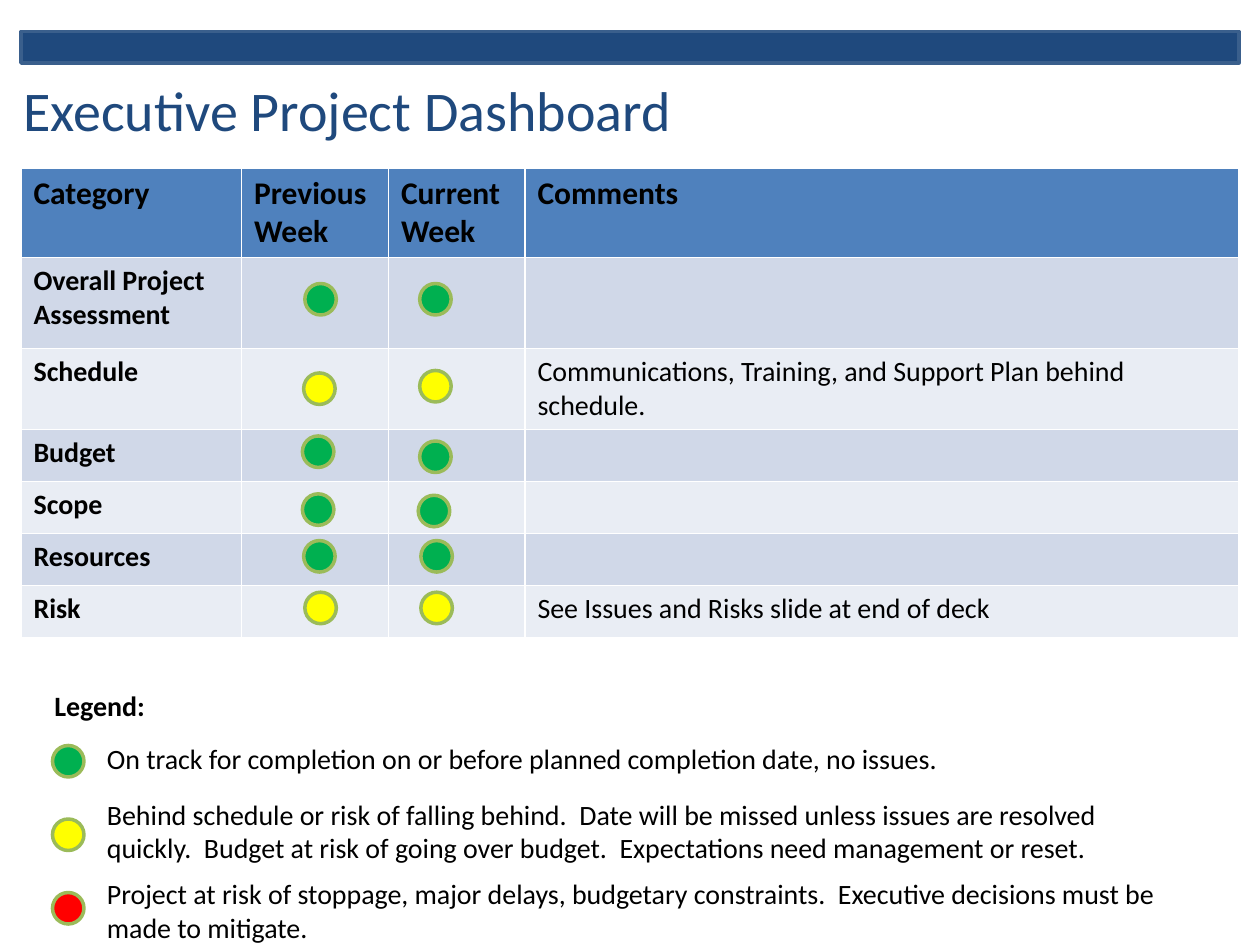
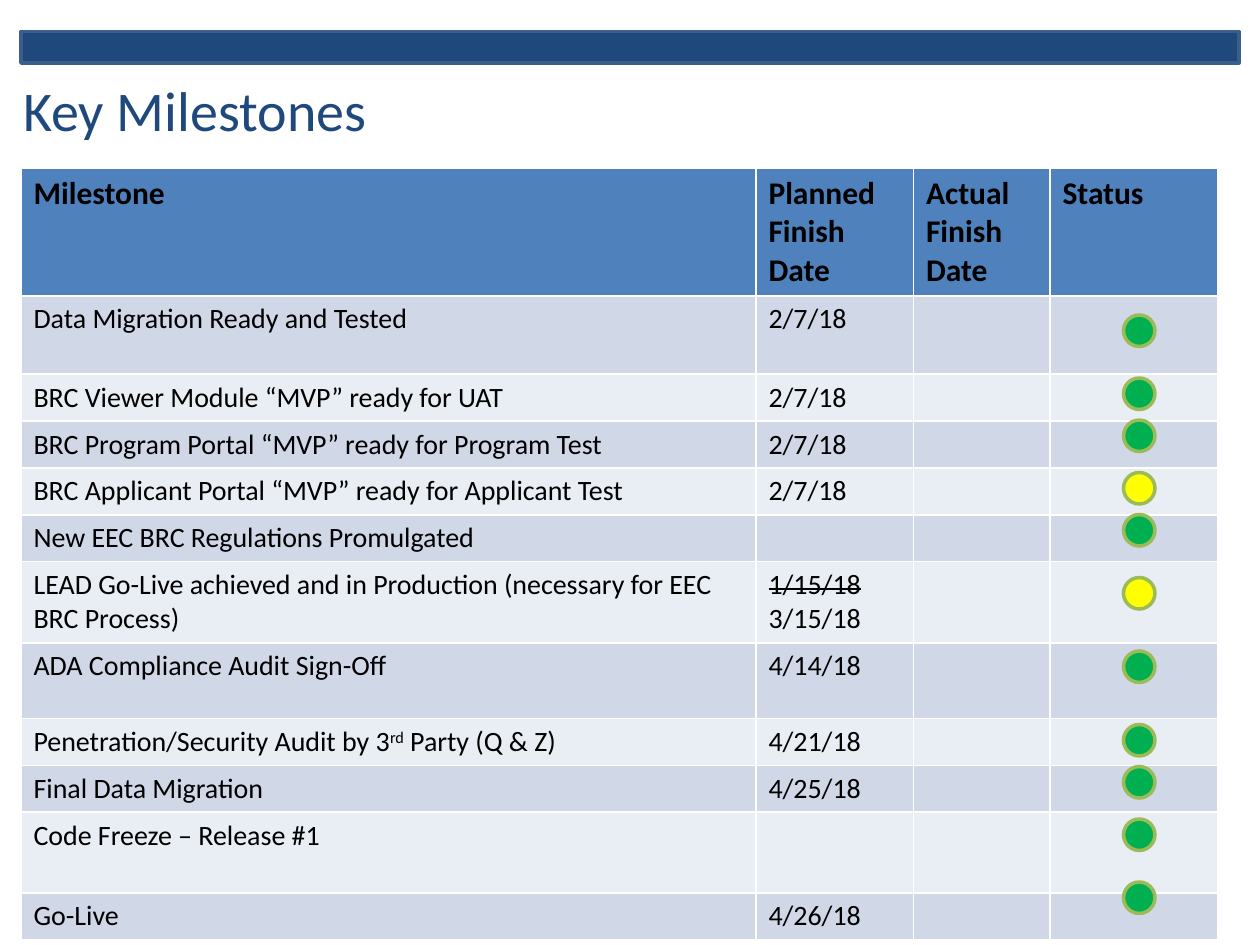
from pptx import Presentation
from pptx.dml.color import RGBColor
from pptx.enum.shapes import MSO_SHAPE
from pptx.enum.text import MSO_ANCHOR, PP_ALIGN
from pptx.util import Pt

RECT, OVAL = MSO_SHAPE.RECTANGLE, MSO_SHAPE.OVAL
MIDDLE, LEFT = MSO_ANCHOR.MIDDLE, PP_ALIGN.LEFT

NAVY = RGBColor(0x1F, 0x49, 0x7D)
NAVY_EDGE = RGBColor(0x3A, 0x5F, 0x8C)
HEADER = RGBColor(0x4F, 0x81, 0xBD)
BANDS = RGBColor(0xD0, 0xD8, 0xE8), RGBColor(0xE9, 0xED, 0xF4)
BLACK = RGBColor(0, 0, 0)
GREEN = RGBColor(0x00, 0xB0, 0x50)
YELLOW = RGBColor(0xFF, 0xFF, 0x00)
RED = RGBColor(0xFF, 0x00, 0x00)
DOT_EDGE = RGBColor(0x9B, 0xBB, 0x59)

FONT = "Calibri"
BODY = 16
DOT = 18
LEFT_EDGE, TABLE_TOP = 12, 96

# In cell text, a new line starts a paragraph and "|" separates runs;
# these runs carry an extra character attribute.
RUN_MARKS = {"1/15/18": ("strike", "sngStrike"), "rd": ("baseline", "30000")}

# Dashboard: category, comment, row height, status colour, dots (previous, current)
DASH_HEAD = ("Category", "Previous\nWeek", "Current\nWeek", "Comments")
DASH_COLS = (126, 84, 78, 408)
DASH_HEAD_HEIGHT = 51
CATEGORIES = [
    ("Overall Project Assessment", "", 52, GREEN, ((174.2, 162), (239.8, 162))),
    ("Schedule", "Communications, Training, and Support Plan behind schedule.",
     46.2, YELLOW, ((173.5, 213.1), (239.8, 211.7))),
    ("Budget", "", 29.7, GREEN, ((172.8, 249.1), (239.8, 252))),
    ("Scope", "", 29.7, GREEN, ((172.8, 282.2), (239, 283))),
    ("Resources", "", 29.7, GREEN, ((173.5, 308.9), (240.5, 308.9))),
    ("Risk", "See Issues and Risks slide at end of deck",
     29.7, YELLOW, ((174.2, 338.4), (240.5, 338.4))),
]

# Legend: colour, dot top, text top, text height, meaning
LEGEND = [
    (GREEN, 426, 420, 26.6,
     "On track for completion on or before planned completion date, no issues."),
    (YELLOW, 468, 452, 46,
     "Behind schedule or risk of falling behind.  Date will be missed unless issues "
     "are resolved quickly.  Budget at risk of going over budget.  Expectations need "
     "management or reset."),
    (RED, 510, 497.5, 46,
     "Project at risk of stoppage, major delays, budgetary constraints.  Executive "
     "decisions must be made to mitigate."),
]

# Milestones: name, planned date, row height, status colour, dot top
MILE_HEAD = ("Milestone", "Planned Finish Date", "Actual Finish Date", "Status")
MILE_COLS = (420, 90, 78, 96)
MILE_HEAD_HEIGHT = 73
MILE_DOT_LEFT = 642
MILESTONES = [
    ("Data Migration Ready and Tested", "2/7/18", 44.7, GREEN, 180),
    ("BRC Viewer Module “MVP” ready for UAT", "2/7/18", 26.8, GREEN, 216),
    ("BRC Program Portal “MVP” ready for Program Test", "2/7/18", 26.8, GREEN, 240),
    ("BRC Applicant Portal “MVP” ready for Applicant Test", "2/7/18", 26.8, YELLOW, 270),
    ("New EEC BRC Regulations Promulgated", "", 26.8, GREEN, 294),
    ("LEAD Go-Live achieved and in Production (necessary for EEC BRC Process)",
     "1/15/18\n3/15/18", 46.2, YELLOW, 330),
    ("ADA Compliance Audit Sign-Off", "4/14/18", 43.2, GREEN, 372),
    ("Penetration/Security Audit by 3|rd| Party (Q & Z)", "4/21/18", 26.8, GREEN, 414),
    ("Final Data Migration", "4/25/18", 26.8, GREEN, 438),
    ("Code Freeze – Release #1", "", 46.2, GREEN, 468),
    ("Go-Live", "4/26/18", 26.8, GREEN, 504),
]


def set_font(font, size, color=BLACK, bold=False):
    font.name, font.size, font.bold = FONT, Pt(size), bold
    font.color.rgb = color


def add_shape(s, kind, left, top, width, height, fill, edge):
    sp = s.shapes.add_shape(kind, Pt(left), Pt(top), Pt(width), Pt(height))
    sp.shadow.inherit = False
    sp.fill.solid()
    sp.fill.fore_color.rgb = fill
    sp.line.color.rgb = edge
    sp.line.width = Pt(2)


def add_dot(s, left, top, color):
    add_shape(s, OVAL, left, top, DOT, DOT, color, DOT_EDGE)


def add_text(s, left, top, width, height, text, bold=False):
    tf = s.shapes.add_textbox(Pt(left), Pt(top), Pt(width), Pt(height)).text_frame
    tf.word_wrap = True
    p = tf.paragraphs[0]
    p.text = text
    set_font(p.font, BODY, bold=bold)


def add_slide(prs, title, title_width):
    """Slide with the shared title style and top band."""
    s = prs.slides.add_slide(prs.slide_layouts[5])
    sp = s.shapes.title
    sp.left, sp.top, sp.width, sp.height = Pt(6), Pt(4.5), Pt(title_width), Pt(116)
    tf = sp.text_frame
    tf.text = title
    tf.vertical_anchor = MIDDLE
    p = tf.paragraphs[0]
    p.alignment = LEFT
    set_font(p.font, 32, NAVY)
    add_shape(s, RECT, LEFT_EDGE, 18, 696, 18, NAVY, NAVY_EDGE)
    return s


def fill_cell(cell, text, color, size, bold):
    cell.fill.solid()
    cell.fill.fore_color.rgb = color
    tf = cell.text_frame
    for i, line in enumerate(text.split("\n")):
        p = tf.add_paragraph() if i else tf.paragraphs[0]
        set_font(p.font, size, bold=bold)
        if not line:  # keeps an empty cell from stretching its row
            p._p.get_or_add_endParaRPr().set("sz", str(size * 100))
            continue
        for part in line.split("|"):
            r = p.add_run()
            r.text = part
            if part in RUN_MARKS:
                r.font._element.set(*RUN_MARKS[part])


def add_table(s, head, rows, cols, heights, bold_first=False):
    table = s.shapes.add_table(len(rows) + 1, len(cols), Pt(LEFT_EDGE), Pt(TABLE_TOP),
                               Pt(sum(cols)), Pt(sum(heights))).table
    for column, width in zip(table.columns, cols):
        column.width = Pt(width)
    for i, (row, height) in enumerate(zip([head, *rows], heights)):
        table.rows[i].height = Pt(height)
        for j, text in enumerate(row):
            color = BANDS[(i - 1) % 2] if i else HEADER
            bold = i == 0 or (bold_first and j == 0)
            fill_cell(table.cell(i, j), text, color, BODY if i else 18, bold)


def build_dashboard(prs):
    s = add_slide(prs, "Executive Project Dashboard", 612)
    add_table(s, DASH_HEAD, [(c[0], "", "", c[1]) for c in CATEGORIES], DASH_COLS,
              [DASH_HEAD_HEIGHT] + [c[2] for c in CATEGORIES], bold_first=True)
    for *_, color, dots in CATEGORIES:
        for left, top in dots:
            add_dot(s, left, top, color)
    # Legend
    add_text(s, 24, 390, 132, 26.6, "Legend:", bold=True)
    for color, dot_top, top, height, meaning in LEGEND:
        add_dot(s, 30, dot_top, color)
        add_text(s, 54, top, 630, height, meaning)


def build_milestones(prs):
    s = add_slide(prs, "Key Milestones", 702)
    add_table(s, MILE_HEAD, [(m[0], m[1], "", "") for m in MILESTONES], MILE_COLS,
              [MILE_HEAD_HEIGHT] + [m[2] for m in MILESTONES])
    for *_, color, top in MILESTONES:
        add_dot(s, MILE_DOT_LEFT, top, color)


def main():
    prs = Presentation()
    prs.slide_width, prs.slide_height = Pt(720), Pt(540)
    build_dashboard(prs)
    build_milestones(prs)
    prs.save("out.pptx")


if __name__ == "__main__":
    main()
